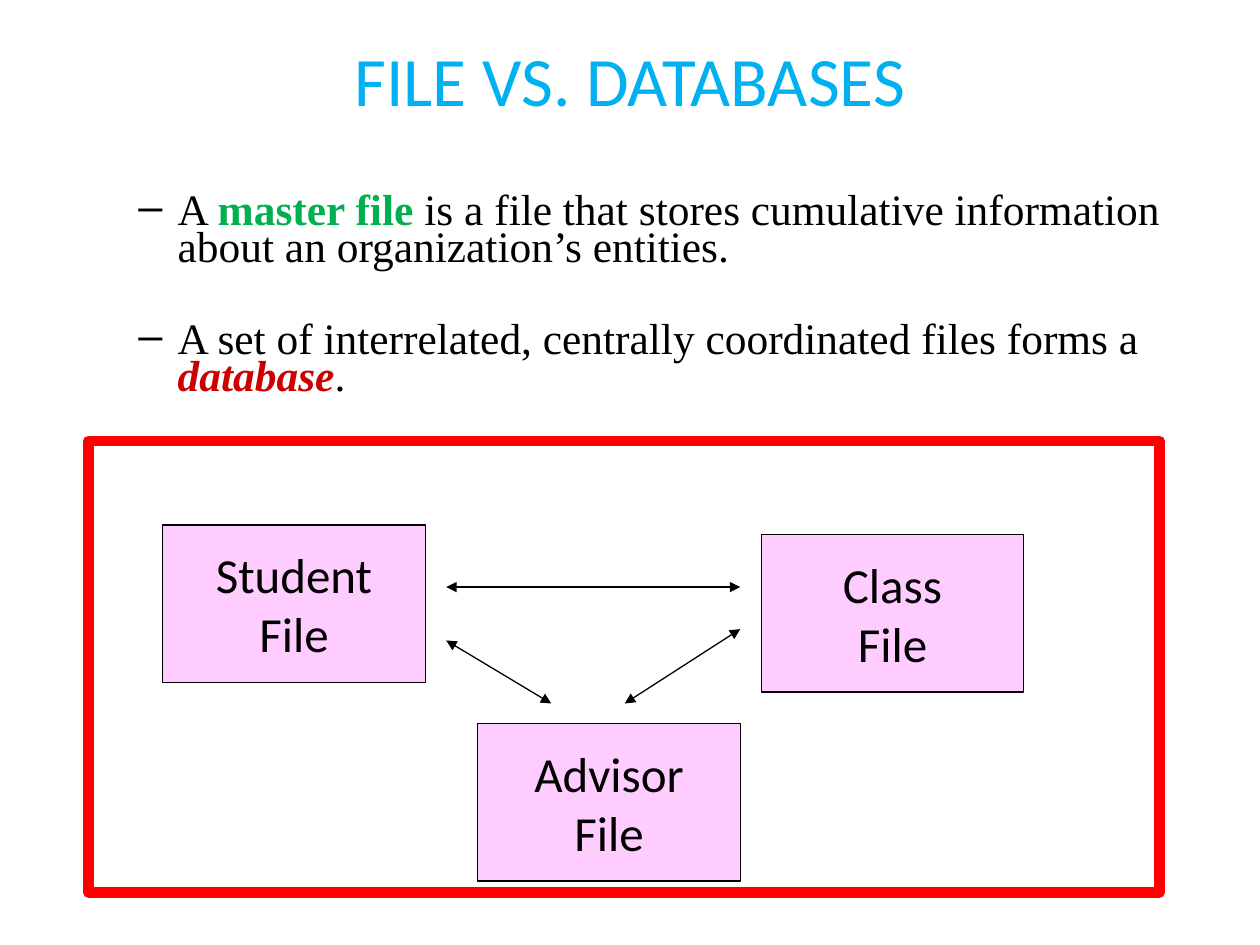
from pptx import Presentation
from pptx.util import Pt
from pptx.dml.color import RGBColor as RGB
from pptx.enum.shapes import MSO_SHAPE as Shape, MSO_CONNECTOR as Conn
from pptx.enum.text import PP_ALIGN as Align, MSO_ANCHOR as Anchor
from pptx.oxml.ns import qn
from lxml.etree import SubElement as Sub

INK = {
    "black": "000000",
    "title": "00B0F0",
    "green": "00B050",
    "crimson": "CC0000",
    "pink": "FFCCFF",
    "red": "FF0000",
}


class Deck:
    sans = "Calibri"
    serif = "Times New Roman"

    def __init__(self):
        self.prs = Presentation()
        self.prs.slide_width, self.prs.slide_height = Pt(720), Pt(540)
        self.slide = self.prs.slides.add_slide(self.prs.slide_layouts[6])

    def ink(self, name):
        return RGB.from_string(INK[name])

    def font(self, para, face, size, color="black"):
        para.font.name, para.font.size = face, Pt(size)
        para.font.color.rgb = self.ink(color)

    def frame(self, x, y, w, h):
        box = self.slide.shapes.add_textbox(Pt(x), Pt(y), Pt(w), Pt(h))
        box.text_frame.word_wrap = True
        return box.text_frame

    def title(self, text, *area):
        body = self.frame(*area)
        body.vertical_anchor = Anchor.MIDDLE
        para = body.paragraphs[0]
        para.text, para.alignment = text, Align.CENTER
        self.font(para, self.sans, 39.6, "title")

    def bullets(self, items, *area):
        body = self.frame(*area)
        for i, runs in enumerate(items):
            para = body.add_paragraph() if i else body.paragraphs[0]
            para.line_spacing, para.space_after = 0.72, Pt(31)
            self.font(para, self.serif, 24.8)
            props = para._p.get_or_add_pPr()
            props.set("marL", str(Pt(58.5)))
            props.set("indent", str(Pt(-22.5)))
            mark = props.find(qn("a:defRPr"))
            for tag, key, value in (("a:buFont", "typeface", "Arial"), ("a:buChar", "char", "–")):
                node = Sub(props, qn(tag))
                node.set(key, value)
                mark.addprevious(node)
            for text, color, italic in runs:
                run = para.add_run()
                run.text = text
                if color:
                    run.font.bold, run.font.italic = True, italic
                    run.font.color.rgb = self.ink(color)

    def rect(self, x, y, w, h, line, width, fill=None):
        box = self.slide.shapes.add_shape(Shape.RECTANGLE, Pt(x), Pt(y), Pt(w), Pt(h))
        box.shadow.inherit = False
        box.line.color.rgb, box.line.width = self.ink(line), Pt(width)
        if fill:
            box.fill.solid()
            box.fill.fore_color.rgb = self.ink(fill)
        else:
            box.fill.background()
        return box

    def file(self, name, x, y):
        body = self.rect(x, y, 150, 90, "black", 0.75, "pink").text_frame
        body.word_wrap, body.vertical_anchor = False, Anchor.MIDDLE
        body.text = f"{name}\nFile"
        for para in body.paragraphs:
            para.alignment = Align.CENTER
            self.font(para, self.sans, 28)

    def arrow(self, *ends):
        link = self.slide.shapes.add_connector(Conn.STRAIGHT, *map(Pt, ends))
        link.line.color.rgb, link.line.width = self.ink("black"), Pt(0.75)
        line = link.line._get_or_add_ln()
        for tag in ("a:headEnd", "a:tailEnd"):
            Sub(line, qn(tag)).set("type", "triangle")
        Sub(link._element.spPr, qn("a:effectLst"))


def main():
    deck = Deck()
    deck.title("FILE VS. DATABASES", 36, 24, 648, 42)
    deck.bullets(
        [
            [
                ("A ", None, False),
                ("master file", "green", False),
                (" is a file that stores cumulative information about an organization’s entities.", None, False),
            ],
            [
                ("A set of interrelated, centrally coordinated files forms a ", None, False),
                ("database", "crimson", True),
                (".", None, False),
            ],
        ],
        36, 108, 648, 126,
    )
    for name, x, y in (("Student", 93, 300), ("Class", 435, 305.5), ("Advisor", 273, 413.5)):
        deck.file(name, x, y)
    for ends in ((255, 335.5, 423, 335.5), (255, 366, 315, 402), (357, 402, 423, 359.5)):
        deck.arrow(*ends)
    deck.rect(50.5, 252, 612, 258, "red", 6)
    deck.prs.save("out.pptx")


if __name__ == "__main__":
    main()
